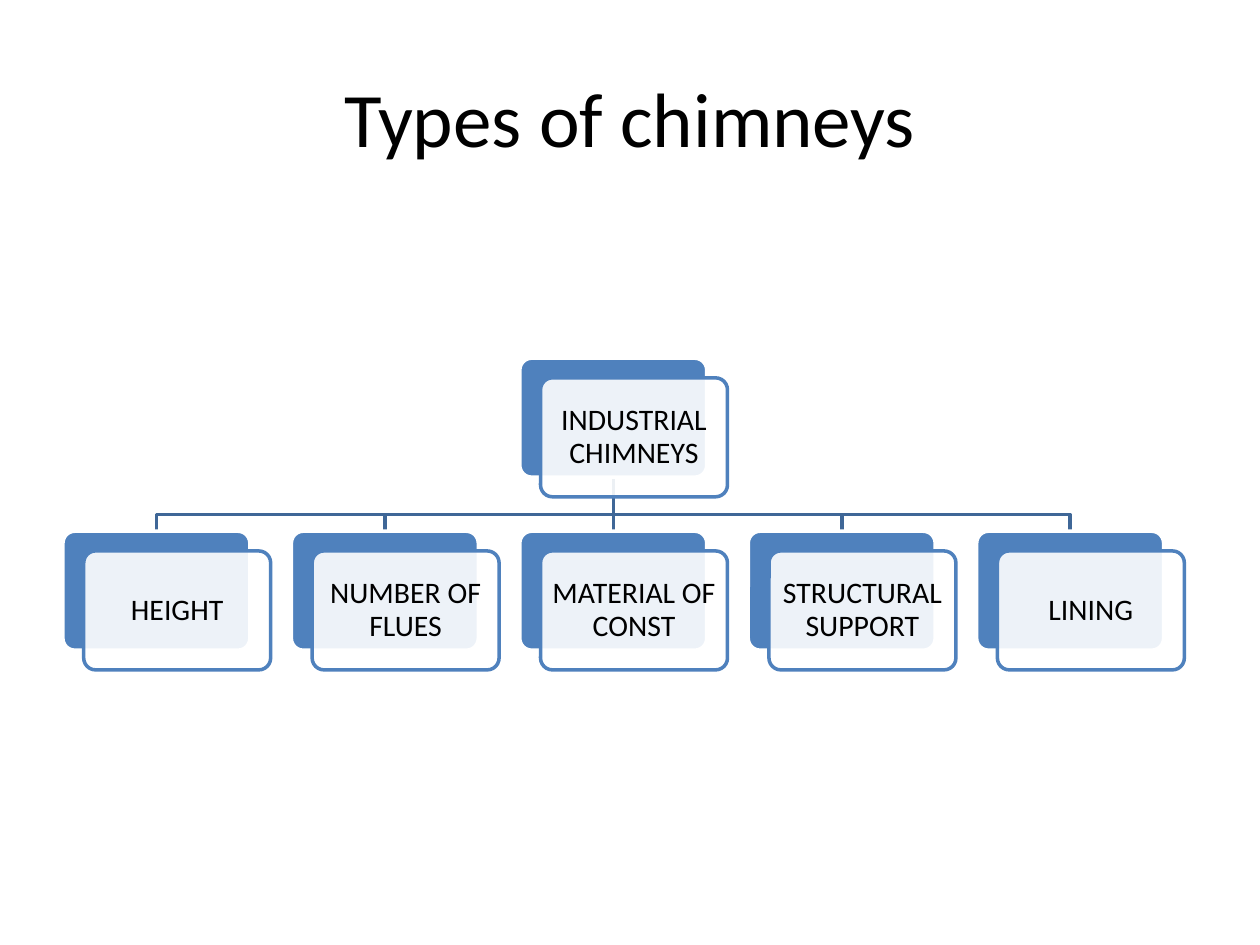
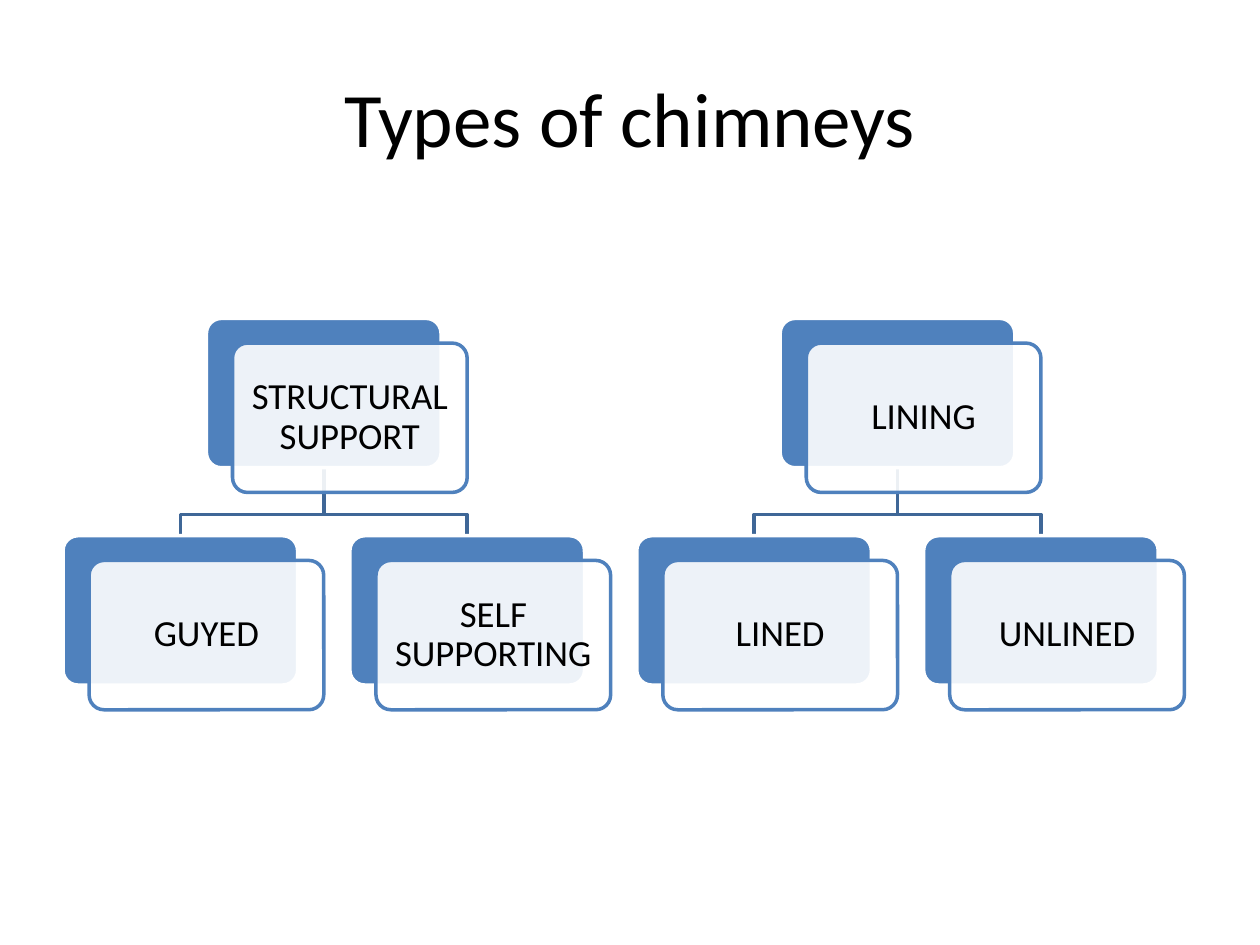
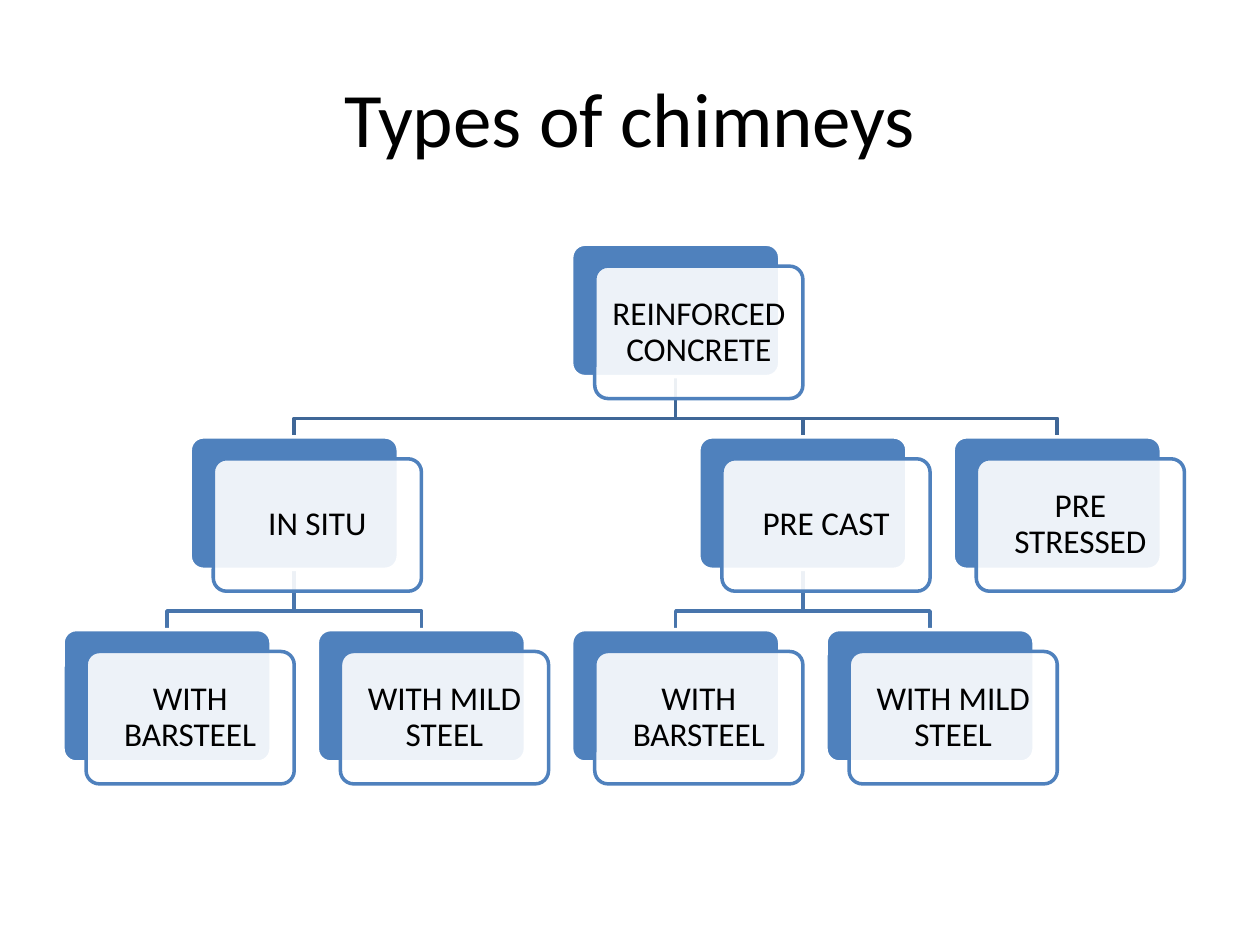
from dataclasses import dataclass, field
from collections import defaultdict
from lxml import etree
from pptx import Presentation
from pptx.dml.color import RGBColor
from pptx.enum.shapes import MSO_CONNECTOR, MSO_SHAPE
from pptx.enum.text import MSO_ANCHOR, PP_ALIGN
from pptx.oxml.ns import qn
from pptx.util import Inches, Pt

BLACK = RGBColor(0x00, 0x00, 0x00)
WHITE = RGBColor(0xFF, 0xFF, 0xFF)
BLUE = RGBColor(0x4F, 0x81, 0xBD)
LINK_COLORS = [RGBColor(0x3F, 0x67, 0x97), RGBColor(0x48, 0x75, 0xAC)]
FONT = "Calibri"
LINE = Pt(2)
TITLE = "Types of chimneys"
TITLE_BOX = (0.5, 0.3, 9, 1.25)
TREE_BOX = (0.5, 1.58, 8.9, 5)

CARD_H = 7 / 11
SHIFT_X, SHIFT_Y = 1 / 9, 2 / 19
PITCH_X, PITCH_Y = 11 / 9, 25 / 27
ELBOW = 0.2
MARGIN = 0.03
POINTS_PER_INCH = 11.4


@dataclass
class Node:
    label: str
    children: list = field(default_factory=list)
    slot: float = 0
    depth: int = 0
    card: object = None


def steel_types():
    return [Node("WITH BARSTEEL"), Node("WITH MILD STEEL")]


SLIDES = [
    [Node("INDUSTRIAL CHIMNEYS", [
        Node("HEIGHT"), Node("NUMBER OF FLUES"), Node("MATERIAL OF CONST"),
        Node("STRUCTURAL SUPPORT"), Node("LINING")])],
    [Node("STRUCTURAL SUPPORT", [Node("GUYED"), Node("SELF SUPPORTING")]),
     Node("LINING", [Node("LINED"), Node("UNLINED")])],
    [Node("REINFORCED CONCRETE", [
        Node("IN SITU", steel_types()), Node("PRE CAST", steel_types()),
        Node("PRE STRESSED")])],
]


def arrange(nodes, free, depth=0):
    placed = []
    for node in nodes:
        node.depth = depth
        below = arrange(node.children, free, depth + 1)
        if node.children:
            node.slot = (node.children[0].slot + node.children[-1].slot) / 2
        else:
            node.slot = free[depth]
        free[depth] = node.slot + 1
        placed += [node] + below
    return placed


def style_font(p, size):
    p.font.name = FONT
    p.font.size = Pt(size)
    p.font.color.rgb = BLACK


def add_title(slide, text):
    title = slide.shapes.title
    title.left, title.top, title.width, title.height = map(Inches, TITLE_BOX)
    tf = title.text_frame
    tf.text = text
    tf.vertical_anchor = MSO_ANCHOR.MIDDLE
    p = tf.paragraphs[0]
    p.alignment = PP_ALIGN.CENTER
    style_font(p, 44)


def add_card(slide, x, y, w, fill, line):
    sp = slide.shapes.add_shape(MSO_SHAPE.ROUNDED_RECTANGLE, Inches(x),
                                Inches(y), Inches(w), Inches(w * CARD_H))
    sp.adjustments[0] = 0.1
    sp.shadow.inherit = False
    sp.fill.solid()
    sp.fill.fore_color.rgb = fill
    sp.line.color.rgb = line
    sp.line.width = LINE
    return sp


def add_node(slide, node, x, y, w):
    node.card = add_card(slide, x, y, w, BLUE, WHITE)
    sp = add_card(slide, x + w * SHIFT_X, y + w * SHIFT_Y, w, WHITE, BLUE)
    color = sp.element.spPr.find(qn("a:solidFill"))[0]
    etree.SubElement(color, qn("a:alpha"), val="90000")
    tf = sp.text_frame
    tf.word_wrap = True
    tf.vertical_anchor = MSO_ANCHOR.MIDDLE
    tf.margin_left = tf.margin_right = Inches(w * MARGIN)
    tf.margin_top = tf.margin_bottom = Inches(w * MARGIN)
    p = tf.paragraphs[0]
    p.text = node.label
    p.alignment = PP_ALIGN.CENTER
    p.line_spacing = 0.9
    style_font(p, round(w * POINTS_PER_INCH))


def add_link(slide, parent, child, w):
    start, end = parent.card, child.card
    x1, y1 = start.left + start.width // 2, start.top + start.height
    x2, y2 = end.left + end.width // 2, end.top
    if parent.slot == child.slot:
        link = slide.shapes.add_connector(MSO_CONNECTOR.STRAIGHT,
                                          x1, y1, x2, y2)
        link.begin_connect(start, 2)
        link.end_connect(end, 0)
        etree.SubElement(link.element.spPr, qn("a:effectLst"))
    else:
        bend = y1 + Inches(w * ELBOW)
        outline = slide.shapes.build_freeform(x1, y1)
        outline.add_line_segments([(x1, bend), (x2, bend), (x2, y2)],
                                  close=False)
        link = outline.convert_to_shape()
        link.fill.background()
        link.shadow.inherit = False
    link.line.color.rgb = LINK_COLORS[parent.depth]
    link.line.width = LINE
    slide.shapes.title.element.addnext(link.element)


def add_tree(slide, roots, box):
    left, top, width, height = box
    nodes = arrange(roots, defaultdict(int))
    last_slot = max(node.slot for node in nodes)
    last_row = max(node.depth for node in nodes)
    w = width / (last_slot * PITCH_X + 1 + SHIFT_X)
    tree_h = w * (last_row * PITCH_Y + CARD_H + SHIFT_Y)
    first_y = top + (height - tree_h) / 2
    for node in nodes:
        add_node(slide, node, left + node.slot * w * PITCH_X,
                 first_y + node.depth * w * PITCH_Y, w)
    for node in nodes:
        for child in node.children:
            add_link(slide, node, child, w)


def main():
    prs = Presentation()
    prs.slide_width, prs.slide_height = Inches(10), Inches(7.5)
    for roots in SLIDES:
        slide = prs.slides.add_slide(prs.slide_layouts[5])
        add_title(slide, TITLE)
        add_tree(slide, roots, TREE_BOX)
    prs.save("out.pptx")


if __name__ == "__main__":
    main()
